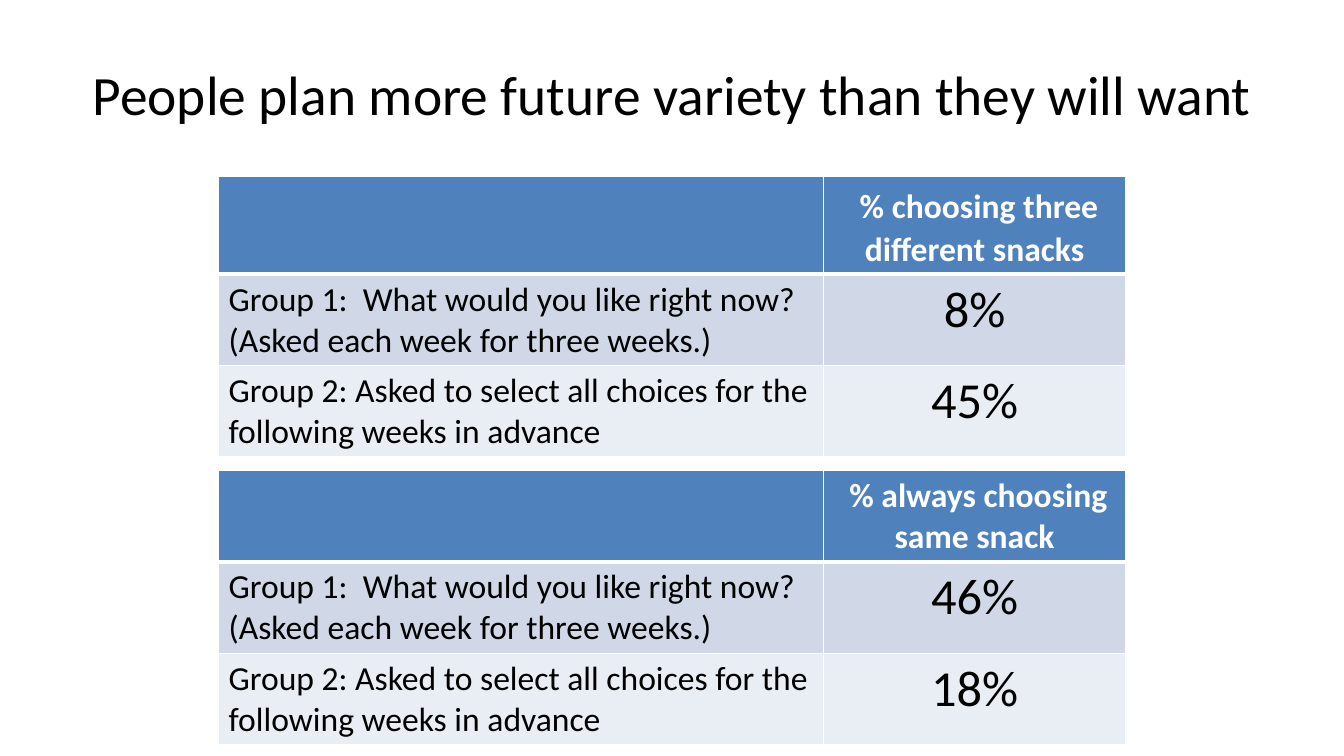
from lxml import etree
from pptx import Presentation
from pptx import util as u
from pptx.dml.color import RGBColor
from pptx.enum import text
from pptx.oxml.ns import qn

COLORS = {"header": "4F81BD", "odd": "D0D8E8", "even": "E9EDF4",
          "white": "FFFFFF", "black": "000000"}
QUESTIONS = ["Group 1:  What would you like right now? (Asked each week for three weeks.)",
             "Group 2: Asked to select all choices for the following weeks in advance"]


class SlideBuilder:
    """Holds the style and the current slide."""

    font = "Calibri"

    def __init__(self, page):
        self.page = page

    def add_spans(self, para, pieces, color="black", bold=False, centered=True):
        para.alignment = text.PP_ALIGN.CENTER if centered else text.PP_ALIGN.LEFT
        for wording, size in pieces:
            span = para.add_run()
            span.text = wording
            span.font.name = self.font
            span.font.size = u.Pt(size)
            span.font.bold = bold
            span.font.color.rgb = RGBColor.from_string(COLORS[color])

    def add_title(self, wording):
        box = self.page.shapes.add_textbox(u.Cm(1.7), u.Cm(0.76), u.Cm(30.48), u.Cm(3.18))
        frame = box.text_frame
        frame.word_wrap = True
        frame.vertical_anchor = text.MSO_ANCHOR.MIDDLE
        self.add_spans(frame.paragraphs[0], [(wording, 39.6)])

    def add_borders(self, cell, widths):
        properties = cell._tc.get_or_add_tcPr()
        for position, (side, width) in enumerate(widths.items()):
            line = etree.Element(qn(f"a:ln{side}"), w=str(u.Pt(width)))
            fill = etree.SubElement(line, qn("a:solidFill"))
            etree.SubElement(fill, qn("a:srgbClr"), val=COLORS["white"])
            properties.insert(position, line)

    def add_table(self, top, header_height, heading, shares):
        heights = [header_height, 2.3, 2.3]
        table = self.page.shapes.add_table(
            3, 2, u.Cm(5.51), u.Cm(top), u.Cm(22.86), u.Cm(sum(heights))).table
        for column, width in zip(table.columns, (15.24, 7.62)):
            column.width = u.Cm(width)
        for row, height in zip(table.rows, heights):
            row.height = u.Cm(height)
        contents = [([], heading)]
        contents += [([(question, 24)], [(share, 36)])
                     for question, share in zip(QUESTIONS, shares)]
        for r, (pair, fill) in enumerate(zip(contents, ("header", "odd", "even"))):
            is_header = r == 0
            for c, pieces in enumerate(pair):
                cell = table.cell(r, c)
                cell.fill.solid()
                cell.fill.fore_color.rgb = RGBColor.from_string(COLORS[fill])
                self.add_borders(cell, {"L": 1, "R": 1, "T": 3 if r == 1 else 1,
                                        "B": 3 if is_header else 1})
                self.add_spans(cell.text_frame.paragraphs[0], pieces,
                               "white" if is_header else "black", is_header, c == 1)


def main():
    deck = Presentation()
    deck.slide_width, deck.slide_height = u.Cm(33.87), u.Cm(19.05)
    slide = SlideBuilder(deck.slides.add_slide(deck.slide_layouts[6]))
    slide.add_title("People plan more future variety than they will want")
    slide.add_table(4.45, 2.4, [(" ", 28), ("% choosing three different snacks", 24)],
                    ["8%", "45%"])
    slide.add_table(11.86, 2.3, [(" % always choosing same snack", 24)], ["46%", "18%"])
    deck.save("out.pptx")


if __name__ == "__main__":
    main()
